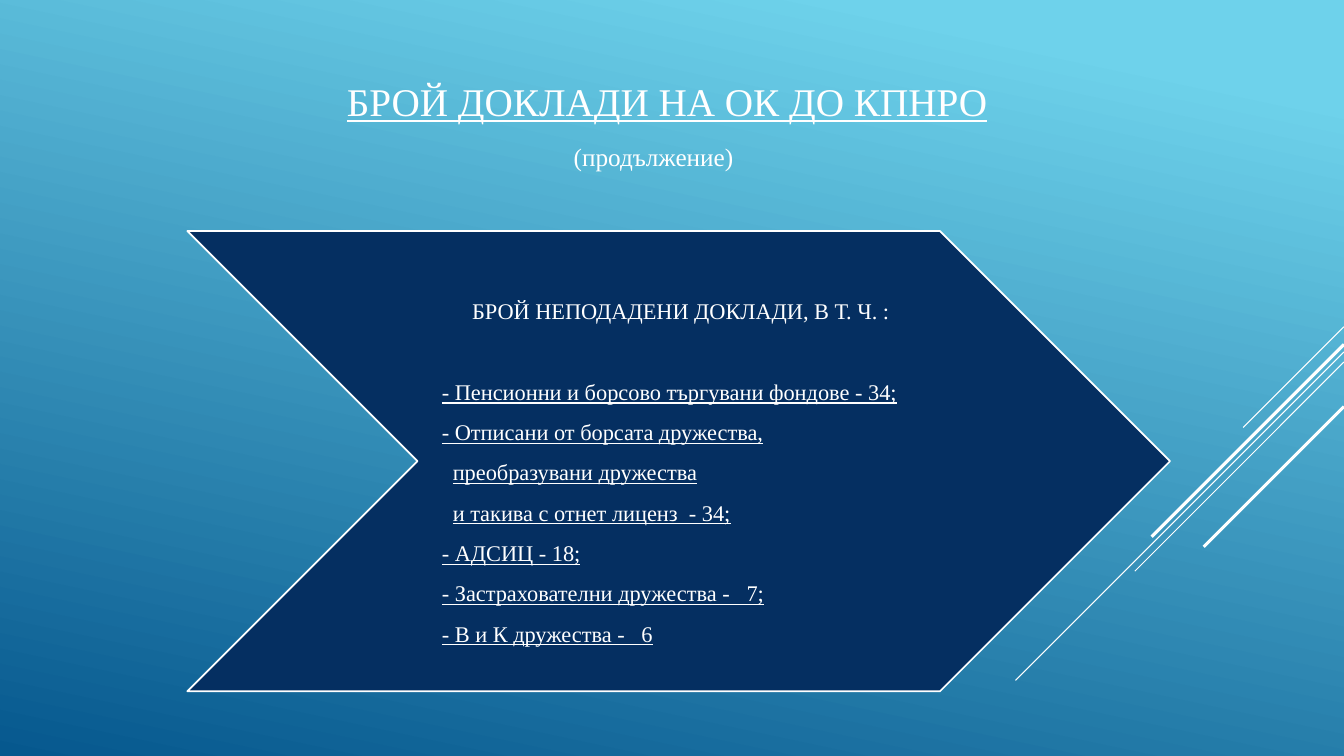
"""Builds the slide on missing reports, laid out on a grid of 16 columns by 9 rows."""
from dataclasses import dataclass

from lxml import etree
from pptx import Presentation
from pptx.dml.color import RGBColor
from pptx.enum.shapes import MSO_CONNECTOR, MSO_SHAPE
from pptx.enum.text import MSO_ANCHOR, MSO_AUTO_SIZE, PP_ALIGN
from pptx.oxml.ns import qn
from pptx.util import Emu, Inches, Pt

STRAIGHT = MSO_CONNECTOR.STRAIGHT
CHEVRON = MSO_SHAPE.CHEVRON
TOP = MSO_ANCHOR.TOP
FIXED = MSO_AUTO_SIZE.NONE
LEFT = PP_ALIGN.LEFT

COLS, ROWS = 16, 9
CELL = Inches(7.5) / ROWS
FONT = "Times New Roman"
WHITE, NAVY, SKY, BLUE = "FFFFFF", "052F61", "6ED2EB", "06588E"


@dataclass
class Box:
    """A place on the grid, in columns and rows."""
    col: float
    row: float
    wide: float
    high: float


@dataclass
class Ray:
    """A diagonal from the right edge, going down and left."""
    row: float
    span: float
    width: float


@dataclass
class Line:
    """One line of text with its indent in columns."""
    text: str
    indent: float = 0
    size: float = 16
    under: bool = True
    before: float = 0
    pitch: float | None = 28.8


RAYS = [Ray(3.89, 1.2, 0.75), Ray(4.19, 3.91, 0.75), Ray(4.31, 2.49, 0.75),
        Ray(4.1, 2.29, 2.25), Ray(4.84, 1.67, 2.25)]
ARROW = Box(2.23, 2.75, 11.7, 5.48)
BODY = Box(5, 3.38, 6.2, 4.32)
HEAD = Box(4.13, 0.92, 11, 1.06)
ITEM, MORE = 0.26, 0.39
TITLE = [Line("БРОЙ ДОКЛАДИ НА ОК ДО КПНРО", size=28, pitch=None),
         Line("(продължение)", 2.7, 18, False, 12, None)]
LIST = [Line("БРОЙ НЕПОДАДЕНИ ДОКЛАДИ, В Т. Ч. :", 0.62, under=False),
        Line("- Пенсионни и борсово търгувани фондове - 34;", ITEM, before=28.8),
        Line("- Отписани от борсата дружества,", ITEM),
        Line("преобразувани дружества", MORE),
        Line("и такива с отнет лиценз  - 34;", MORE),
        Line("- АДСИЦ - 18;", ITEM),
        Line("- Застрахователни дружества -   7;", ITEM),
        Line("- В и К дружества -   6", ITEM)]


def grid(count: float) -> Emu:
    """Turn grid cells into a length."""
    return Emu(round(count * CELL))


def area(box: Box) -> tuple[Emu, ...]:
    """Give left, top, width and height of a box."""
    return tuple(map(grid, (box.col, box.row, box.wide, box.high)))


def tint(code: str) -> RGBColor:
    """Turn a hex string into a colour."""
    return RGBColor.from_string(code)


def style(item, values: dict) -> None:
    """Set each format value on an object."""
    for name, value in values.items():
        setattr(item, name, value)


def paint(slide) -> None:
    """Fill the background with a slanted gradient."""
    fill = slide.background.fill
    fill.gradient()
    fill.gradient_angle = 258
    for stop, code, place in zip(fill.gradient_stops, (SKY, BLUE), (0.1, 1)):
        stop.color.rgb = tint(code)
        stop.position = place


def draw_ray(slide, ray: Ray) -> None:
    """Draw one white diagonal."""
    ends = (COLS, ray.row, COLS - ray.span, ray.row + ray.span)
    line = slide.shapes.add_connector(STRAIGHT, *map(grid, ends))
    line.line.color.rgb = tint(WHITE)
    line.line.width = Pt(ray.width)
    etree.SubElement(line.element.spPr, qn("a:effectLst"))


def draw_arrow(slide) -> None:
    """Draw the navy chevron."""
    shape = slide.shapes.add_shape(CHEVRON, *area(ARROW))
    shape.shadow.inherit = False
    shape.fill.solid()
    shape.fill.fore_color.rgb = tint(NAVY)
    shape.line.color.rgb = tint(WHITE)
    shape.line.width = Pt(1.25)


def write(shape, box: Box, lines: list[Line]) -> None:
    """Place a text shape and fill in its lines."""
    style(shape, dict(zip(("left", "top", "width", "height"), area(box))))
    frame = shape.text_frame
    style(frame, {"word_wrap": True, "auto_size": FIXED, "vertical_anchor": TOP,
                  "margin_left": 0, "margin_top": 0,
                  "margin_right": 0, "margin_bottom": 0})
    for spot, line in enumerate(lines):
        para = frame.add_paragraph() if spot else frame.paragraphs[0]
        style(para, {"alignment": LEFT, "space_before": Pt(line.before),
                     "space_after": Pt(0),
                     "line_spacing": Pt(line.pitch) if line.pitch else 1.0})
        props = para._p.get_or_add_pPr()
        props.set("marL", str(grid(line.indent)))
        props.set("indent", "0")
        run = para.add_run()
        run.text = line.text
        style(run.font, {"name": FONT, "size": Pt(line.size),
                         "underline": line.under})
        run.font.color.rgb = tint(WHITE)


def main() -> None:
    """Build and save the slide."""
    deck = Presentation()
    style(deck, {"slide_width": grid(COLS), "slide_height": grid(ROWS)})
    slide = deck.slides.add_slide(deck.slide_layouts[5])
    paint(slide)
    for ray in RAYS:
        draw_ray(slide, ray)
    draw_arrow(slide)
    write(slide.shapes.add_textbox(*area(BODY)), BODY, LIST)
    write(slide.shapes.title, HEAD, TITLE)
    deck.save("out.pptx")


if __name__ == "__main__":
    main()
